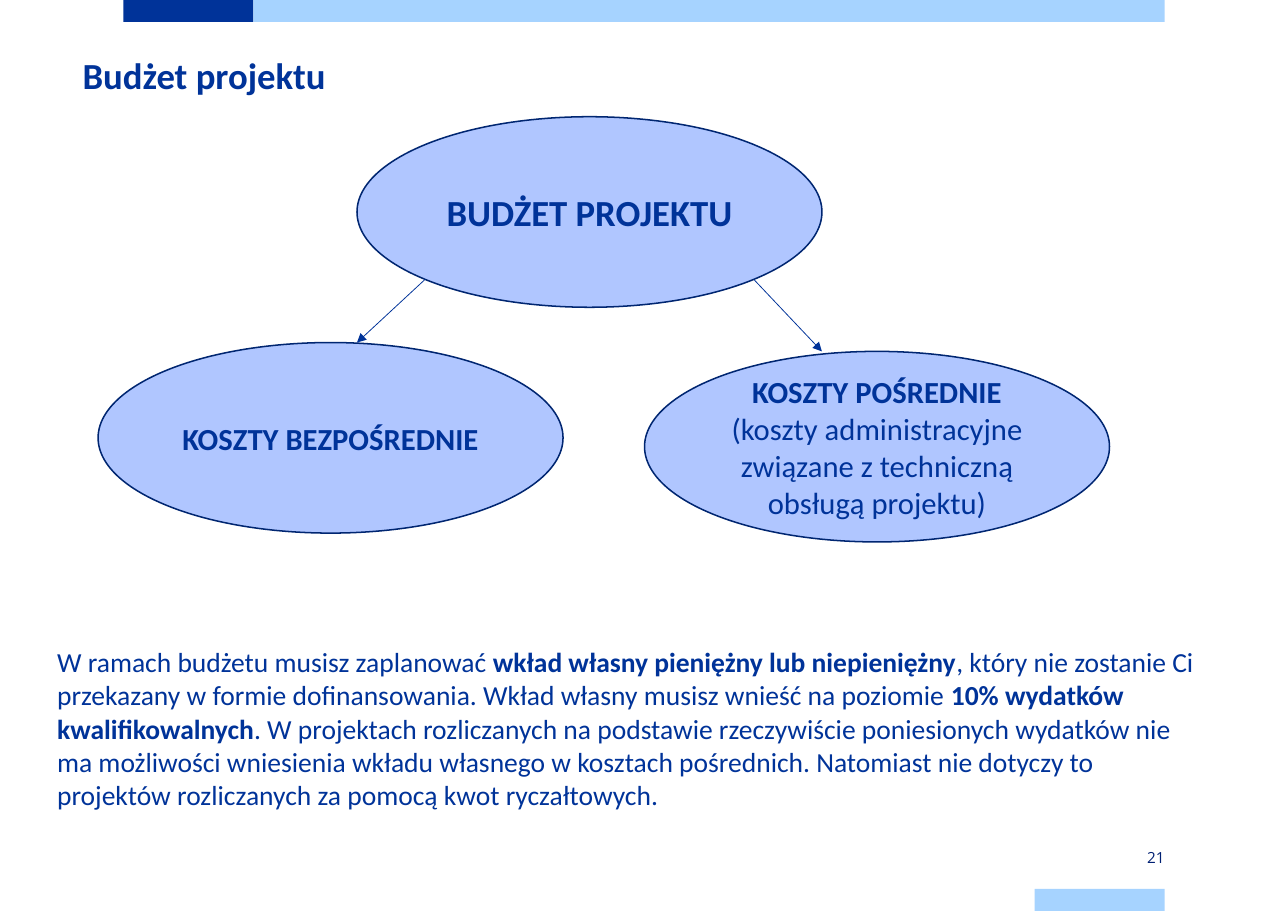
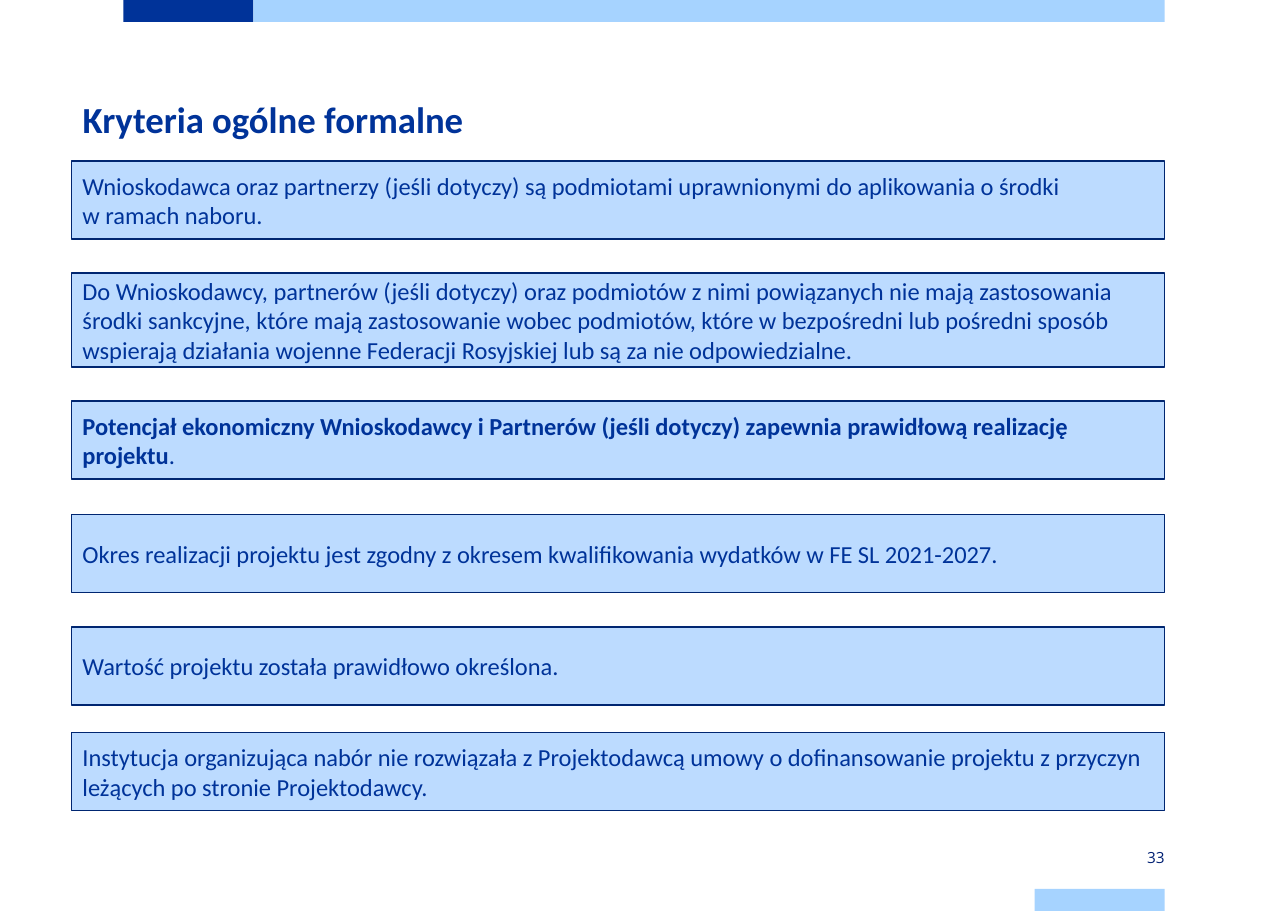
"""Builds two slides on the project budget and the general formal criteria."""
from dataclasses import dataclass
from math import sqrt

from lxml.etree import SubElement
from pptx import Presentation
from pptx.dml.color import RGBColor
from pptx.enum.shapes import MSO_CONNECTOR, MSO_SHAPE
from pptx.enum.text import MSO_ANCHOR, PP_ALIGN
from pptx.oxml.ns import qn
from pptx.util import Pt

PX = 9144
PAGE = (1169, 827)

BUDGET = {
    "title": "Budżet projektu", "title_box": (65, 43, 968, 50), "number": "21",
    "whole": (324, 106, "*BUDŻET PROJEKTU*"),
    "parts": [
        (89, 311, "*KOSZTY BEZPOŚREDNIE*"),
        (585, 319, "*KOSZTY POŚREDNIE *(koszty administracyjne związane z techniczną "
                   "obsługą projektu)"),
    ],
    "note": "W ramach budżetu musisz zaplanować *wkład własny pieniężny lub niepieniężny*, "
            "który nie zostanie Ci przekazany w formie dofinansowania. Wkład własny musisz "
            "wnieść na poziomie *10% wydatków kwalifikowalnych*. W projektach rozliczanych na "
            "podstawie rzeczywiście poniesionych wydatków nie ma możliwości wniesienia wkładu "
            "własnego w kosztach pośrednich. Natomiast nie dotyczy to projektów rozliczanych "
            "za pomocą kwot ryczałtowych.",
}
CRITERIA = {
    "title": "Kryteria ogólne formalne", "title_box": (65, 83, 969, 50), "number": "33",
    "rows": [
        (71, 31, "Wnioskodawca oraz partnerzy (jeśli dotyczy) są podmiotami uprawnionymi do "
                 "aplikowania o środki \nw ramach naboru."),
        (85, 31, "Do Wnioskodawcy, partnerów (jeśli dotyczy) oraz podmiotów z nimi powiązanych "
                 "nie mają zastosowania środki sankcyjne, które mają zastosowanie wobec "
                 "podmiotów, które w bezpośredni lub pośredni sposób wspierają działania wojenne "
                 "Federacji Rosyjskiej lub są za nie odpowiedzialne."),
        (71, 32, "*Potencjał ekonomiczny Wnioskodawcy i Partnerów (jeśli dotyczy) zapewnia "
                 "prawidłową realizację projektu*."),
        (71, 31, "Okres realizacji projektu jest zgodny z okresem kwalifikowania wydatków w "
                 "FE SL 2021-2027."),
        (71, 25, "Wartość projektu została prawidłowo określona."),
        (71, 0, "Instytucja organizująca nabór nie rozwiązała z Projektodawcą umowy o "
                "dofinansowanie projektu z przyczyn leżących po stronie Projektodawcy."),
    ],
}


@dataclass(frozen=True)
class Theme:
    """Colours, fonts and type sizes."""
    navy: str = "003399"
    sky: str = "A6D3FF"
    outline: str = "002671"
    oval: str = "B0C6FF"
    row: str = "BCDBFF"
    number: str = "002073"
    font: str = "Calibri"
    number_font: str = "Open Sans"
    title_pt: int = 24
    part_pt: int = 20
    note_pt: int = 18
    row_pt: int = 16
    number_pt: int = 10


T = Theme()
BANDS = [((112, 0, 118, 20), T.navy), ((230, 0, 827, 20), T.sky), ((939, 807, 118, 20), T.sky)]
NUMBER_BOX = (939, 768, 118, 20)
NOTE_BOX = (42, 581, 1055, 162)
OVAL_W, OVAL_H = 422, 173
ROW_X, ROW_Y, ROW_W = 65, 146, 992


def emu(*lengths):
    """Turn px lengths into EMU."""
    return [round(n * PX) for n in lengths]


def rgb(color):
    """Turn a hex string into a colour."""
    return RGBColor.from_string(color)


def write(sp, text, size, color=T.navy, font=T.font, align=PP_ALIGN.LEFT,
          anchor=MSO_ANCHOR.MIDDLE):
    """Fill a shape with one paragraph; asterisks switch bold, newlines break lines."""
    tf = sp.text_frame
    tf.word_wrap, tf.vertical_anchor = True, anchor
    p = tf.paragraphs[0]
    p.alignment = align
    for i, part in enumerate(text.split("*")):
        for j, line in enumerate(part.split("\n")):
            if j:
                p.add_line_break()
            if line:
                r = p.add_run()
                r.text = line
                r.font.name, r.font.size, r.font.bold = font, Pt(size), i % 2 == 1
                r.font.color.rgb = rgb(color)


def add_block(s, kind, box, fill, line=None):
    """Add a flat preset shape."""
    sp = s.shapes.add_shape(kind, *emu(*box))
    sp.shadow.inherit = False
    sp.fill.solid()
    sp.fill.fore_color.rgb = rgb(fill)
    if line:
        sp.line.color.rgb, sp.line.width = rgb(line), Pt(1)
    else:
        sp.line.fill.background()
    return sp


def add_arrow(s, start, end):
    """Add a thin line with a triangle at its end."""
    cn = s.shapes.add_connector(MSO_CONNECTOR.STRAIGHT, *emu(*start, *end))
    cn.line.color.rgb, cn.line.width = rgb(T.navy), Pt(0.5)
    SubElement(cn.line._get_or_add_ln(), qn("a:tailEnd"), type="triangle")
    SubElement(cn._element.spPr, qn("a:effectLst"))


def add_oval(s, x, y, text, size):
    """Add one oval of the cost diagram."""
    sp = add_block(s, MSO_SHAPE.OVAL, (x, y, OVAL_W, OVAL_H), T.oval, T.outline)
    write(sp, text, size, align=PP_ALIGN.CENTER)


def add_slide(prs, data):
    """Add a slide with its title and number."""
    s = prs.slides.add_slide(prs.slide_layouts[5])
    title = s.shapes.title
    title.left, title.top, title.width, title.height = emu(*data["title_box"])
    write(title, f"*{data['title']}*", T.title_pt, anchor=MSO_ANCHOR.TOP)
    number = s.shapes.add_textbox(*emu(*NUMBER_BOX))
    tf = number.text_frame
    tf.margin_left = tf.margin_right = 0
    tf.margin_top = tf.margin_bottom = 8 * PX
    write(number, data["number"], T.number_pt, T.number, T.number_font, PP_ALIGN.RIGHT)
    return s


def add_bands(prs, s):
    """Draw the bands and move them to the slide master."""
    tree = prs.slide_master.shapes._spTree
    for box, color in BANDS:
        tree.append(add_block(s, MSO_SHAPE.RECTANGLE, box, color)._element)


def build_budget(s):
    """Draw the cost diagram and the note below it."""
    x, y, text = BUDGET["whole"]
    add_oval(s, x, y, text, T.title_pt)
    mid_x, mid_y = x + OVAL_W / 2, y + OVAL_H / 2
    for side, (px, py, label) in zip((-1, 1), BUDGET["parts"]):
        add_oval(s, px, py, label, T.part_pt)
        start = (mid_x + side * OVAL_W / 2 / sqrt(2), mid_y + OVAL_H / 2 / sqrt(2))
        add_arrow(s, start, (mid_x + side * OVAL_W / 2, py))
    note = s.shapes.add_textbox(*emu(*NOTE_BOX))
    write(note, BUDGET["note"], T.note_pt, anchor=MSO_ANCHOR.TOP)


def build_criteria(s):
    """Stack the criteria boxes."""
    y = ROW_Y
    for height, gap, text in CRITERIA["rows"]:
        sp = add_block(s, MSO_SHAPE.RECTANGLE, (ROW_X, y, ROW_W, height), T.row, T.outline)
        write(sp, text, T.row_pt)
        y += height + gap


def main():
    """Build and save the presentation."""
    prs = Presentation()
    prs.slide_width, prs.slide_height = emu(*PAGE)
    s = add_slide(prs, BUDGET)
    add_bands(prs, s)
    build_budget(s)
    build_criteria(add_slide(prs, CRITERIA))
    prs.save("out.pptx")


if __name__ == "__main__":
    main()
